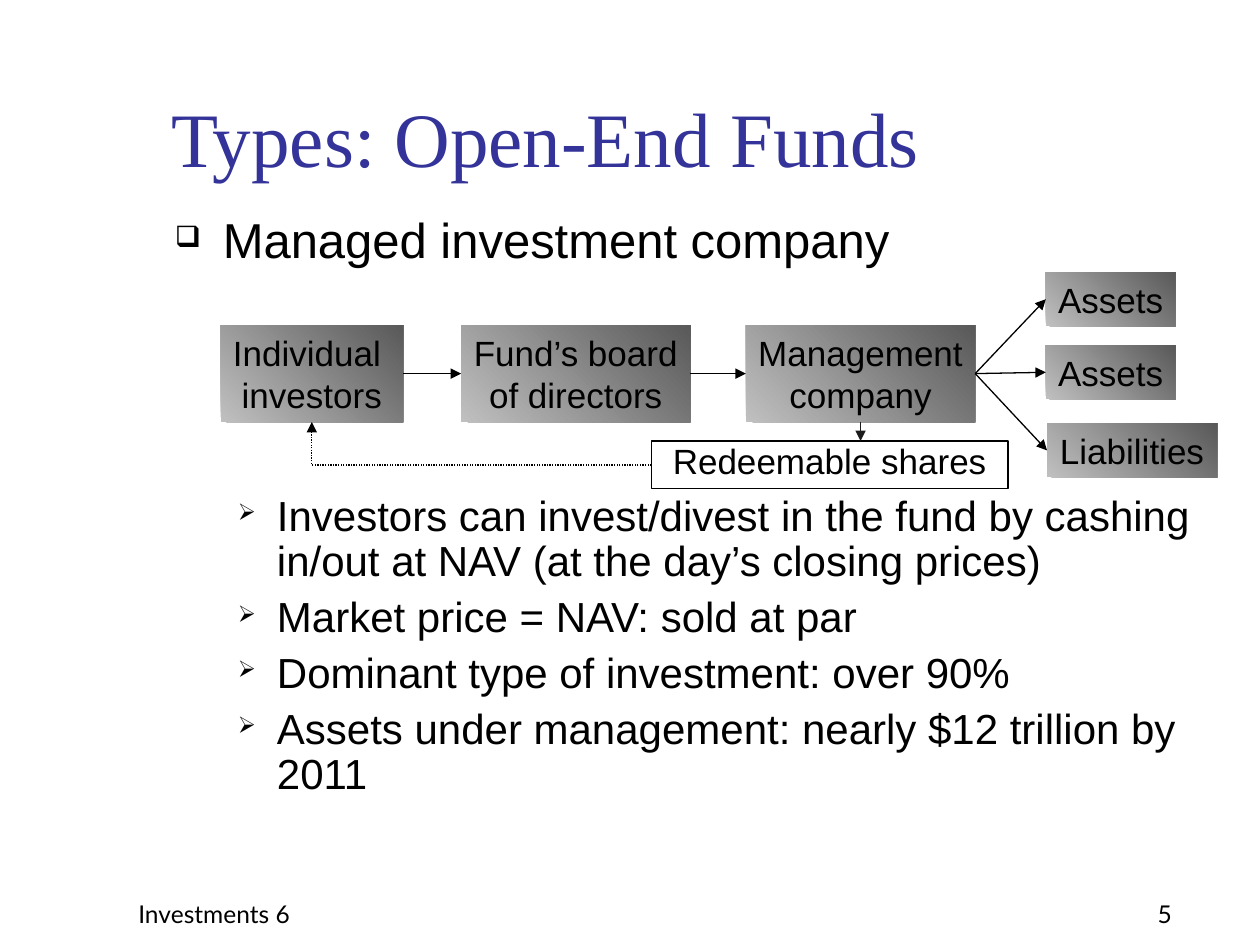
from dataclasses import dataclass
from typing import Optional

import pptx
import pptx.dml.color
import pptx.enum.dml
import pptx.enum.shapes
import pptx.enum.text
import pptx.oxml
import pptx.oxml.ns
import pptx.util
from pptx.util import Inches

RGB = pptx.dml.color.RGBColor
ANCHOR = pptx.enum.text.MSO_ANCHOR
ALIGN = pptx.enum.text.PP_ALIGN
CONNECTOR = pptx.enum.shapes.MSO_CONNECTOR
TOP, LEFT, BOTTOM, RIGHT = range(4)


@dataclass(frozen=True)
class Theme:
    title: RGB = RGB(0x33, 0x33, 0x99)
    ink: RGB = RGB(0, 0, 0)
    soft_ink: RGB = RGB(0x1C, 0x1C, 0x1C)
    light: RGB = RGB(0xC0, 0xC0, 0xC0)
    dark: RGB = RGB(0x59, 0x59, 0x59)
    title_font: str = "Times New Roman"
    body_font: str = "Arial"
    footer_font: str = "Lato"
    title_size: int = 44
    heading_size: int = 28
    bullet_size: int = 24
    box_size: int = 20
    footer_size: int = 14
    line_width: float = 0.75


@dataclass(frozen=True)
class Box:
    name: str
    lines: tuple[str, ...]
    x: float
    y: float
    w: float
    h: float
    shaded: bool = True


@dataclass(frozen=True)
class Arrow:
    start: str
    start_side: int
    end: str
    end_side: int


@dataclass(frozen=True)
class Bullet:
    text: str
    char: str
    size: int
    indent: float
    hang: float
    scale: int
    before: float


THEME = Theme()
FLOW_Y, FLOW_H = 2.58, 0.77
HOLDING_X, HOLDING_H = 8.3, 0.43

BOXES = (
    Box("investors", ("Individual ", "investors"), 1.75, FLOW_Y, 1.45, FLOW_H),
    Box("board", ("Fund’s board", "of directors"), 3.66, FLOW_Y, 1.82, FLOW_H),
    Box("manager", ("Management", "company"), 5.92, FLOW_Y, 1.82, FLOW_H),
    Box("shares", ("Redeemable shares",), 5.17, 3.5, 2.83, 0.38, shaded=False),
    Box("assets 1", ("Assets",), HOLDING_X, 2.16, 1.03, HOLDING_H),
    Box("assets 2", ("Assets",), HOLDING_X, 2.74, 1.03, HOLDING_H),
    Box("liabilities", ("Liabilities",), HOLDING_X + 0.01, 3.36, 1.35, HOLDING_H),
)

ARROWS = (
    Arrow("investors", RIGHT, "board", LEFT),
    Arrow("board", RIGHT, "manager", LEFT),
    Arrow("manager", RIGHT, "assets 1", LEFT),
    Arrow("manager", RIGHT, "assets 2", LEFT),
    Arrow("manager", RIGHT, "liabilities", LEFT),
)

POINTS = (
    "Investors can invest/divest in the fund by cashing in/out at NAV (at the day’s closing prices)",
    "Market price = NAV: sold at par",
    "Dominant type of investment: over 90%",
    "Assets under management: nearly $12 trillion by 2011",
)
DIAGRAM_GAP, POINT_GAP = 129, 6


def style(p, font: str, size: float, color: RGB, align=ALIGN.LEFT) -> None:
    p.font.name = font
    p.font.size = pptx.util.Pt(size)
    p.font.color.rgb = color
    p.alignment = align


def add_xml(parent, tag: str, **attrs: str):
    child = pptx.oxml.parse_xml(f"<a:{tag} {pptx.oxml.ns.nsdecls('a')}/>")
    for key, value in attrs.items():
        child.set(key, value)
    parent.append(child)
    return child


def add_title(s, text: str) -> None:
    title = s.shapes.title
    title.left, title.top = Inches(1.26), Inches(0.68)
    title.width, title.height = Inches(8.52), Inches(0.82)
    tf = title.text_frame
    tf.text = text
    tf.auto_size = pptx.enum.text.MSO_AUTO_SIZE.NONE
    tf.vertical_anchor = ANCHOR.BOTTOM
    style(tf.paragraphs[0], THEME.title_font, THEME.title_size, THEME.title)


def add_footer(s, text: str, x: float, w: float, align) -> None:
    tf = s.shapes.add_textbox(Inches(x), Inches(6.92), Inches(w), Inches(0.5)).text_frame
    tf.word_wrap = True
    tf.vertical_anchor = ANCHOR.BOTTOM
    tf.text = text
    style(tf.paragraphs[0], THEME.footer_font, THEME.footer_size, THEME.ink, align)


def add_body(s, bullets: list[Bullet]) -> None:
    tf = s.shapes.add_textbox(Inches(1.29), Inches(1.67), Inches(8.5), Inches(5.04)).text_frame
    tf.word_wrap = True
    for i, bullet in enumerate(bullets):
        p = tf.add_paragraph() if i else tf.paragraphs[0]
        p.text = bullet.text
        p.line_spacing = 0.9
        p.space_before = pptx.util.Pt(bullet.before)
        style(p, THEME.body_font, bullet.size, THEME.ink)
        props = p._p.get_or_add_pPr()
        props.set("marL", str(Inches(bullet.indent)))
        props.set("indent", str(-Inches(bullet.hang)))
        marks = (
            add_xml(props, "buSzPct", val=str(bullet.scale * 1000)),
            add_xml(props, "buChar", char=bullet.char),
        )
        run_props = props.find(pptx.oxml.ns.qn("a:defRPr"))
        for mark in marks:
            run_props.addprevious(mark)


def add_box(s, box: Box):
    sp = s.shapes.add_shape(
        pptx.enum.shapes.MSO_SHAPE.RECTANGLE,
        Inches(box.x), Inches(box.y), Inches(box.w), Inches(box.h),
    )
    sp.shadow.inherit = False
    if box.shaded:
        sp.fill.gradient()
        sp.fill.gradient_angle = 45
        for stop, color in zip(sp.fill.gradient_stops, (THEME.light, THEME.dark)):
            stop.color.rgb = color
        sp.line.fill.background()
    else:
        sp.fill.background()
        sp.line.color.rgb = THEME.ink
        sp.line.width = pptx.util.Pt(THEME.line_width)
    tf = sp.text_frame
    tf.word_wrap = not box.shaded
    tf.vertical_anchor = ANCHOR.TOP
    for i, line in enumerate(box.lines):
        p = tf.add_paragraph() if i else tf.paragraphs[0]
        p.text = line
        p.line_spacing = 1.0 if box.shaded else 0.8
        style(p, THEME.body_font, THEME.box_size, THEME.ink, ALIGN.CENTER)
    return sp


def add_arrow(s, start, start_side: int, end, end_side: Optional[int] = None,
              kind=CONNECTOR.STRAIGHT, color: RGB = THEME.ink):
    drop_x = start.left + start.width // 2
    line = s.shapes.add_connector(kind, drop_x, start.top + start.height, drop_x, end.top)
    line.begin_connect(start, start_side)
    if end_side is not None:
        line.end_connect(end, end_side)
    line.line.color.rgb = color
    line.line.width = pptx.util.Pt(THEME.line_width)
    add_xml(line.line._get_or_add_ln(), "tailEnd", type="triangle")
    add_xml(line._element.spPr, "effectLst")
    return line


def main() -> None:
    prs = pptx.Presentation()
    prs.slide_width, prs.slide_height = Inches(10), Inches(7.5)
    s = prs.slides.add_slide(prs.slide_layouts[5])
    add_title(s, "Types: Open-End Funds")
    add_footer(s, "Investments 6", 1, 3, ALIGN.LEFT)
    add_footer(s, "5", 8.58, 1.33, ALIGN.CENTER)
    heading = Bullet("Managed investment company", "❑", THEME.heading_size, 0.38, 0.38, 60, 0)
    add_body(s, [heading] + [
        Bullet(text, "➢", THEME.bullet_size, 0.81, 0.31, 55, POINT_GAP if i else DIAGRAM_GAP)
        for i, text in enumerate(POINTS)
    ])
    boxes = {box.name: add_box(s, box) for box in BOXES}
    for arrow in ARROWS:
        add_arrow(s, boxes[arrow.start], arrow.start_side, boxes[arrow.end], arrow.end_side)
    add_arrow(s, boxes["manager"], BOTTOM, boxes["shares"], color=THEME.soft_ink)
    redeem = add_arrow(s, boxes["shares"], LEFT, boxes["investors"], BOTTOM, CONNECTOR.ELBOW)
    redeem.line.dash_style = pptx.enum.dml.MSO_LINE.ROUND_DOT
    redeem._element.spPr.find(pptx.oxml.ns.qn("a:prstGeom")).set("prst", "bentConnector2")
    prs.save("out.pptx")


if __name__ == "__main__":
    main()
